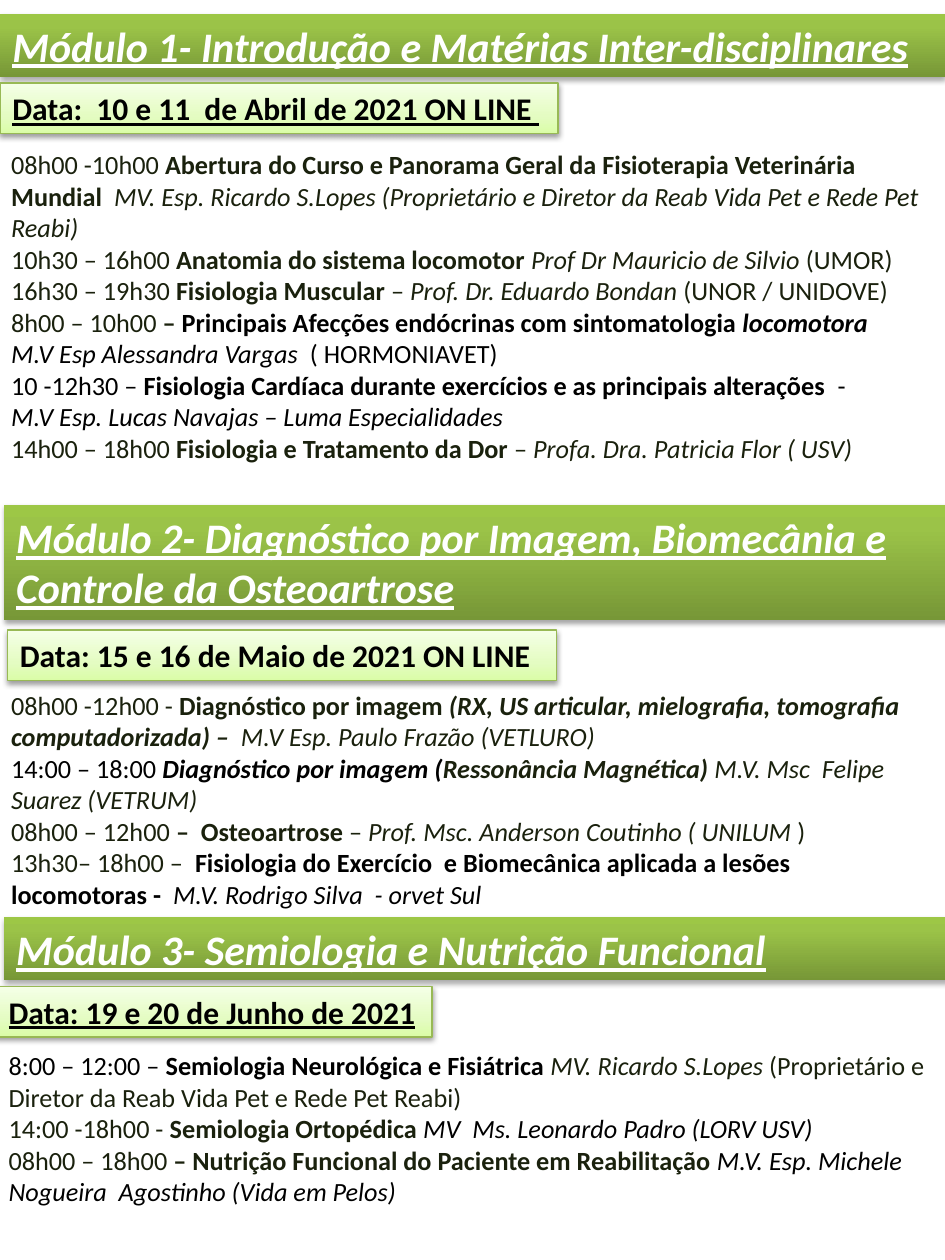
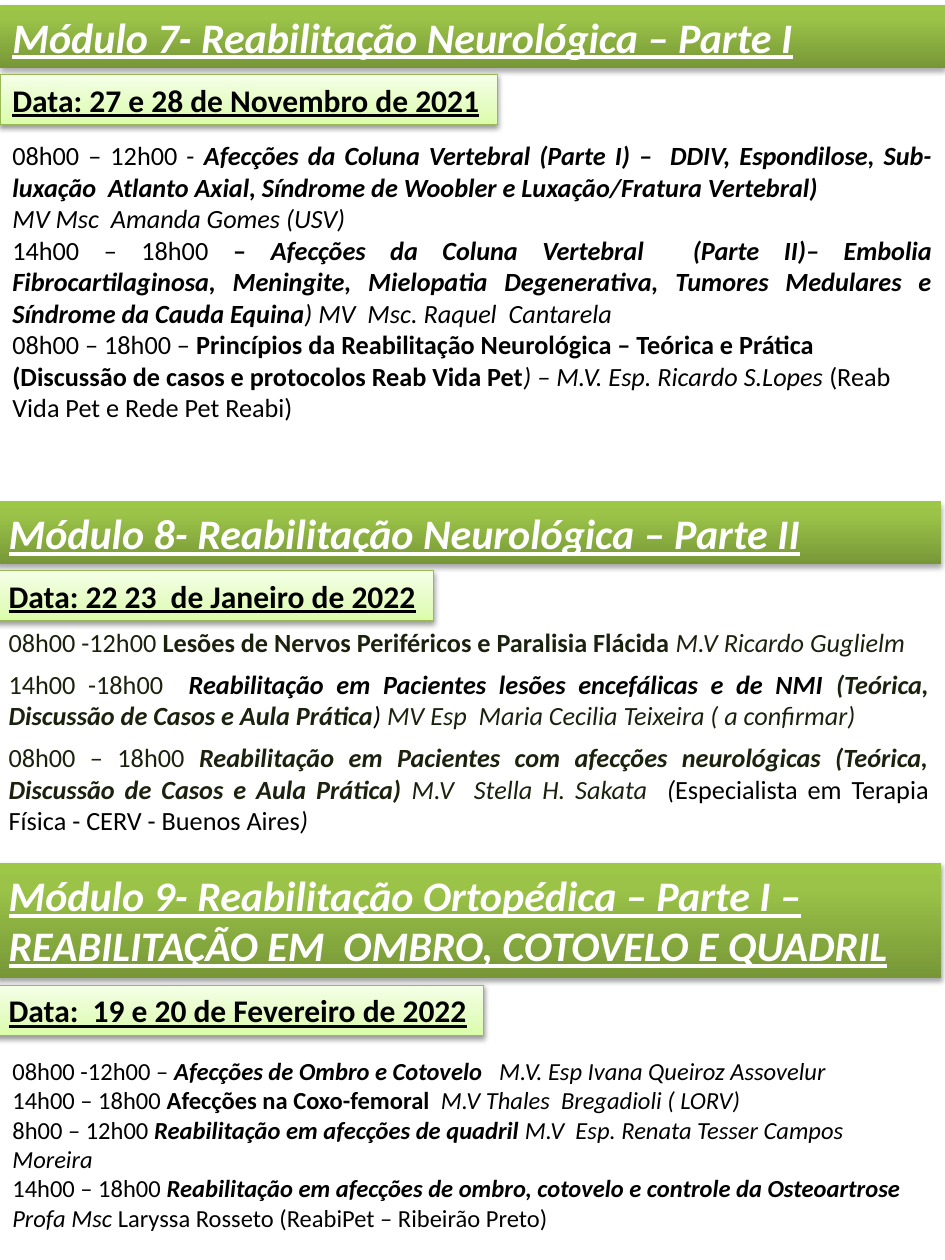
from lxml.etree import SubElement
from pptx import Presentation
from pptx.dml.color import RGBColor
from pptx.enum.shapes import MSO_SHAPE
from pptx.enum.text import MSO_ANCHOR, MSO_AUTO_SIZE, PP_ALIGN
from pptx.oxml.ns import qn
from pptx.util import Inches, Pt

FONT = "Calibri"
WHITE, BLACK, DARK = "FFFFFF", "000000", "1A210D"
BAND_STOPS = [(0, "779737"), (80, "9BC348"), (100, "9DC746")]
DATE_STOPS = [(0, "DAFDA7"), (35, "E4FCC2"), (100, "F5FFE7")]
DATE_LINE = "98B955"
PAGE_W = 7.5

MODULE_1 = [
    [("08h00 -10h00 ", "d"),
     ("Abertura do Curso e Panorama Geral da Fisioterapia Veterinária Mundial  ", "db"),
     ("MV. Esp. Ricardo S.Lopes (Proprietário e Diretor da Reab Vida Pet e Rede Pet Reabi)", "di")],
    [("10h30 – 16h00 ", "d"), ("Anatomia do sistema locomotor ", "db"),
     ("Prof Dr Mauricio de Silvio", "di"), (" (UMOR)", "d")],
    [("16h30 – 19h30 ", "d"), ("Fisiologia Muscular ", "db"), ("– ", "d"),
     ("Prof. Dr. Eduardo Bondan ", "di"), ("(UNOR / UNIDOVE)", "d")],
    [("8h00 – 10h00 ", "d"), ("– ", "db"),
     ("Principais Afecções endócrinas com sintomatologia ", "b"), ("locomotora", "bi")],
    [("M.V Esp Alessandra Vargas ", "i"), (" ( HORMONIAVET)", "")],
    [("10 -12h30 – ", ""),
     ("Fisiologia Cardíaca durante exercícios e as principais alterações  ", "b"), ("-", "")],
    [("M.V Esp. Lucas Navajas – Luma Especialidades", "i")],
    [("14h00 – 18h00 ", "d"), ("Fisiologia e Tratamento da Dor ", "db"), ("– ", "d"),
     ("Profa. Dra. Patricia Flor ( USV)", "di")],
]
MODULE_2 = [
    [("08h00 -12h00 - ", "d"), ("Diagnóstico por imagem ", "db"),
     ("(RX, US articular, mielografia, tomografia computadorizada) –  ", "dbi"),
     ("M.V Esp. Paulo Frazão (VETLURO)", "di")],
    [("14:00 – 18:00 ", ""), ("Diagnóstico por imagem (", "bi"),
     ("Ressonância Magnética) ", "dbi"), ("M.V. Msc  Felipe Suarez (VETRUM)", "di")],
    [("08h00 – 12h00 ", "d"), ("–  Osteoartrose ", "db"), ("– ", "d"),
     ("Prof. Msc. Anderson Coutinho ( UNILUM ", "di"), (")", "d")],
    [("13h30– 18h00 –  ", "d"),
     ("Fisiologia do Exercício  e Biomecânica aplicada a lesões locomotoras -  ", "b"),
     ("M.V. Rodrigo Silva  - orvet Sul", "i")],
]
MODULE_3 = [
    [("8:00 – 12:00 – ", ""), ("Semiologia Neurológica e Fisiátrica ", "b"),
     ("MV. Ricardo S.Lopes ", "di"),
     ("(Proprietário e Diretor da Reab Vida Pet e Rede Pet Reabi)", "d")],
    [("14:00 -18h00 - ", "d"), ("Semiologia Ortopédica ", "db"),
     ("MV  Ms. Leonardo Padro (LORV USV)", "i")],
    [("08h00 – 18h00 ", "d"), ("– Nutrição Funcional do Paciente em Reabilitação ", "db"),
     ("M.V. Esp. Michele Nogueira  Agostinho (Vida em Pelos)", "i")],
]
MODULE_7 = [
    [("08h00 – 12h00 - ", ""),
     ("Afecções da Coluna Vertebral (Parte I) –  DDIV, Espondilose, Sub-luxação  "
      "Atlanto Axial, Síndrome de Woobler e Luxação/Fratura Vertebral) ", "bi")],
    [("MV Msc  Amanda Gomes (USV)", "i")],
    [("14h00 – 18h00 ", ""), ("– ", "b"),
     ("Afecções da Coluna Vertebral  (Parte II)– Embolia Fibrocartilaginosa, Meningite, "
      "Mielopatia Degenerativa, Tumores Medulares e Síndrome da Cauda Equina", "bi"),
     (") MV  Msc. Raquel  Cantarela ", "i")],
    [("08h00 – 18h00 – ", ""),
     ("Princípios da Reabilitação Neurológica – Teórica e Prática "
      "(Discussão de casos e protocolos Reab Vida Pet", "b"),
     (") – M.V. Esp. Ricardo S.Lopes ", "i"), ("(Reab Vida Pet e Rede Pet Reabi)", "")],
]
MODULE_8 = [
    [("08h00 -12h00 ", "d"), ("Lesões de Nervos Periféricos e Paralisia Flácida ", "db"),
     ("M.V Ricardo Guglielm ", "di")],
    [("14h00 -18h00  ", "d"), ("Reabilitação em Pacientes lesões encefálicas e de NMI ", "bi"),
     ("(Teórica, Discussão de Casos e Aula Prática", "dbi"), (") ", "i"),
     ("MV Esp  Maria Cecilia Teixeira ( a confirmar) ", "di")],
    [("08h00 – 18h00 ", "d"),
     ("Reabilitação em Pacientes com afecções neurológicas "
      "(Teórica, Discussão de Casos e Aula Prática) ", "dbi"),
     ("M.V  Stella H. Sakata  ", "di"), ("(", "i"),
     ("Especialista em Terapia Física - CERV - Buenos Aires", ""), (") ", "i")],
]
MODULE_9 = [
    [("08h00 -12h00 – ", ""), ("Afecções de Ombro e Cotovelo  ", "bi"),
     (" M.V. Esp Ivana Queiroz Assovelur", "i")],
    [("14h00 – 18h00 ", ""), ("Afecções na Coxo-femoral  ", "b"),
     ("M.V Thales  Bregadioli ( LORV)", "i")],
    [("8h00 – 12h00 ", ""), ("Reabilitação em afecções de quadril ", "bi"),
     ("M.V  Esp. Renata Tesser Campos Moreira", "i")],
    [("14h00 – 18h00 ", ""),
     ("Reabilitação em afecções de ombro, cotovelo e controle da Osteoartrose  ", "bi"),
     ("Profa Msc ", "i"), ("Laryssa Rosseto (ReabiPet – Ribeirão Preto)", "")],
]


def rgb(color):
    return RGBColor.from_string(color)


def fill_gradient(sp, stops):
    sp.fill.gradient()
    sp.fill.gradient_angle = 90
    gs_list = sp._element.spPr.find(qn("a:gradFill")).find(qn("a:gsLst"))
    for gs in list(gs_list):
        gs_list.remove(gs)
    for pos, color in stops:
        gs = SubElement(gs_list, qn("a:gs"), pos=str(pos * 1000))
        SubElement(gs, qn("a:srgbClr"), val=color)


def add_shadow(sp, opacity, distance):
    sp.shadow.inherit = False
    effects = sp._element.spPr.find(qn("a:effectLst"))
    shadow = SubElement(effects, qn("a:outerShdw"), blurRad=str(Pt(3.1)),
                        dist=str(Pt(distance)), dir="5400000", rotWithShape="0")
    color = SubElement(shadow, qn("a:srgbClr"), val=BLACK)
    SubElement(color, qn("a:alpha"), val=str(opacity * 1000))


def add_box(s, x, y, w, h, stops, text, size, color, wrap):
    sp = s.shapes.add_shape(MSO_SHAPE.RECTANGLE, Inches(x), Inches(y), Inches(w), Inches(h))
    fill_gradient(sp, stops)
    tf = sp.text_frame
    tf.word_wrap = wrap
    tf.auto_size = MSO_AUTO_SIZE.SHAPE_TO_FIT_TEXT
    tf.vertical_anchor = MSO_ANCHOR.TOP
    p = tf.paragraphs[0]
    p.text = text
    p.alignment = PP_ALIGN.LEFT
    p.font.name = FONT
    p.font.size = Pt(size)
    p.font.bold = True
    p.font.color.rgb = rgb(color)
    return sp, p


def add_title_band(s, x, y, text, lines=1):
    h = 0.5 if lines == 1 else 0.91
    sp, p = add_box(s, x, y, PAGE_W, h, BAND_STOPS, text, 24, WHITE, True)
    sp.line.fill.background()
    add_shadow(sp, 35, 1.8)
    p.font.italic = True
    p.font.underline = True


def add_date_tag(s, x, y, w, text, underline=True):
    sp, p = add_box(s, x, y, w, 0.4, DATE_STOPS, text, 18, BLACK, False)
    sp.line.color.rgb = rgb(DATE_LINE)
    sp.line.width = Pt(0.75)
    add_shadow(sp, 38, 1.6)
    p.font.underline = underline


def add_schedule(s, x, y, h, items, w=PAGE_W, size=15, justified=0, space_before=0):
    tf = s.shapes.add_textbox(Inches(x), Inches(y), Inches(w), Inches(h)).text_frame
    tf.word_wrap = True
    tf.auto_size = MSO_AUTO_SIZE.SHAPE_TO_FIT_TEXT
    for i, runs in enumerate(items):
        p = tf.add_paragraph() if i else tf.paragraphs[0]
        p.alignment = PP_ALIGN.JUSTIFY if i < justified else PP_ALIGN.LEFT
        p.space_before = Pt(space_before)
        p.font.name = FONT
        p.font.size = Pt(size)
        for text, style in runs:
            r = p.add_run()
            r.text = text
            r.font.bold = "b" in style
            r.font.italic = "i" in style
            r.font.color.rgb = rgb(DARK if "d" in style else BLACK)


def build_modules_1_to_3(s):
    add_title_band(s, 0, 0.11, "Módulo 1- Introdução e Matérias Inter-disciplinares")
    add_date_tag(s, 0, 0.66, 4.43, "Data:  10 e 11  de Abril de 2021 ON LINE ")
    add_schedule(s, -0.01, 1.13, 2.63, MODULE_1)

    add_title_band(s, 0.03, 4.01, "Módulo 2- Diagnóstico por Imagem, Biomecânia e "
                   "Controle da Osteoartrose", lines=2)
    add_date_tag(s, 0.06, 5, 4.36, "Data: 15 e 16 de Maio de 2021 ON LINE ", underline=False)
    add_schedule(s, -0.01, 5.42, 1.87, MODULE_2)

    add_title_band(s, 0.03, 7.28, "Módulo 3- Semiologia e Nutrição Funcional")
    add_date_tag(s, -0.03, 7.83, 3.46, "Data: 19 e 20 de Junho de 2021")
    add_schedule(s, -0.03, 8.28, 1.36, MODULE_3)


def build_modules_7_to_9(s):
    add_title_band(s, 0, 0.04, "Módulo 7- Reabilitação Neurológica – Parte I")
    add_date_tag(s, 0, 0.59, 3.95, "Data: 27 e 28 de Novembro de 2021")
    add_schedule(s, 0, 1.06, 2.63, MODULE_7, justified=3)

    add_title_band(s, -0.03, 3.98, "Módulo 8- Reabilitação Neurológica – Parte II")
    add_schedule(s, -0.03, 4.92, 1.78, MODULE_8, justified=3, space_before=6)
    add_date_tag(s, -0.03, 4.53, 3.47, "Data: 22 23  de Janeiro de 2022")

    add_title_band(s, -0.03, 6.85, "Módulo 9- Reabilitação Ortopédica – Parte I – "
                   "REABILITAÇÃO EM  OMBRO, COTOVELO E QUADRIL", lines=2)
    add_date_tag(s, -0.03, 7.82, 3.87, "Data:  19 e 20 de Fevereiro de 2022")
    add_schedule(s, 0, 8.33, 1.77, MODULE_9, w=7.37, size=14)


def main():
    prs = Presentation()
    prs.slide_width = Inches(PAGE_W)
    prs.slide_height = Inches(10)
    for build in (build_modules_1_to_3, build_modules_7_to_9):
        build(prs.slides.add_slide(prs.slide_layouts[6]))
    prs.save("out.pptx")


if __name__ == "__main__":
    main()
